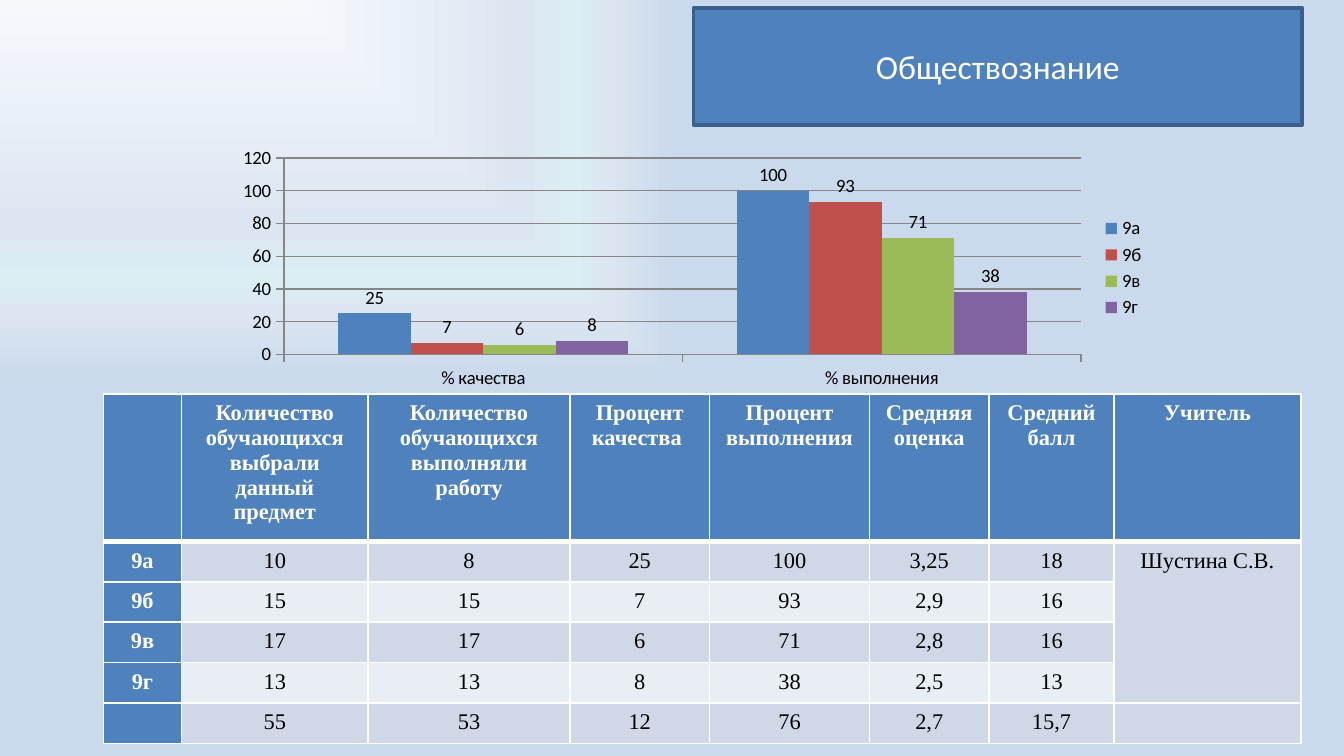
from dataclasses import dataclass

from lxml import etree
from pptx import Presentation
from pptx.chart.data import CategoryChartData
from pptx.dml.color import RGBColor
from pptx.enum.chart import XL_CHART_TYPE as ChartType, XL_LABEL_POSITION as LabelPos
from pptx.enum.chart import XL_LEGEND_POSITION as LegendPos, XL_TICK_MARK as Tick
from pptx.enum.shapes import MSO_SHAPE as Shape
from pptx.enum.text import MSO_ANCHOR as Anchor, PP_ALIGN as Align
from pptx.oxml import parse_xml
from pptx.oxml.ns import nsdecls, qn
from pptx.util import Inches, Pt


@dataclass(frozen=True)
class Theme:
    blue: str = "4F81BD"
    blue_dark: str = "3A5F8C"
    white: str = "FFFFFF"
    black: str = "000000"
    grid: str = "868686"
    bands: tuple = ("D0D8E8", "E9EDF4")
    series: tuple = ("4F81BD", "C0504D", "9BBB59", "8064A2")
    background: tuple = ((0, "F6F9FC"), (60, "DCE6F2"), (74, "DBEEF4"),
                         (83, "DCE6F2"), (100, "CAD9EB"))
    sans: str = "Calibri"
    serif: str = "Times New Roman"
    title_size: int = 18
    table_size: int = 12
    chart_size: int = 10


T = Theme()

CLASSES = ("9а", "9б", "9в", "9г")
HEADER = ("", "Количество обучающихся выбрали данный предмет",
          "Количество обучающихся выполняли работу", "Процент качества ",
          "Процент выполнения", "Средняя оценка", "Средний балл", "Учитель")
RESULTS = (
    ("9а", "10", "8", "25", "100", "3,25", "18", "Шустина С.В."),
    ("9б", "15", "15", "7", "93", "2,9", "16", ""),
    ("9в", "17", "17", "6", "71", "2,8", "16", ""),
    ("9г", "13", "13", "8", "38", "2,5", "13", ""),
    ("", "55", "53", "12", "76", "2,7", "15,7", ""),
)
COL_WIDTHS = (0.58, 1.39, 1.5, 1.04, 1.19, 0.89, 0.93, 1.39)
HEADER_HEIGHT, ROW_HEIGHT = 1.1, 0.3


def rgb(color):
    return RGBColor.from_string(color)


def style_font(font, name, size, color, bold=False):
    font.name, font.size, font.bold = name, Pt(size), bold
    font.color.rgb = rgb(color)


def add_background(s):
    stops = "".join(f'<a:gs pos="{pos * 1000}"><a:srgbClr val="{color}"/></a:gs>'
                    for pos, color in T.background)
    bg = parse_xml(f'<p:bg {nsdecls("p", "a")}><p:bgPr><a:gradFill><a:gsLst>{stops}</a:gsLst>'
                   '<a:path path="rect"/></a:gradFill><a:effectLst/></p:bgPr></p:bg>')
    s.element.cSld.insert(0, bg)


def add_title(s, left, top, width, height):
    sp = s.shapes.add_shape(Shape.RECTANGLE, Inches(left), Inches(top),
                            Inches(width), Inches(height))
    sp.shadow.inherit = False
    sp.fill.solid()
    sp.fill.fore_color.rgb = rgb(T.blue)
    sp.line.color.rgb = rgb(T.blue_dark)
    sp.line.width = Pt(2)
    tf = sp.text_frame
    tf.text = "Обществознание"
    tf.vertical_anchor = Anchor.MIDDLE
    p = tf.paragraphs[0]
    p.alignment = Align.CENTER
    style_font(p.runs[0].font, T.sans, T.title_size, T.white)


def add_results_chart(s, left, top, width, height):
    data = CategoryChartData()
    data.categories = ("% качества", "% выполнения")
    for name, row in zip(CLASSES, RESULTS):
        data.add_series(name, (int(row[3]), int(row[4])))
    chart = s.shapes.add_chart(ChartType.COLUMN_CLUSTERED, Inches(left), Inches(top),
                               Inches(width), Inches(height), data).chart
    style_font(chart.font, T.sans, T.chart_size, T.black)
    chart.has_title = False
    chart.has_legend = True
    chart.legend.position = LegendPos.RIGHT
    chart.legend.include_in_layout = False

    # Axes and gridlines
    value_axis = chart.value_axis
    value_axis.has_major_gridlines = True
    for axis in (chart.category_axis, value_axis):
        axis.major_tick_mark = Tick.OUTSIDE
        axis.minor_tick_mark = Tick.NONE
    for line in (chart.category_axis.format.line, value_axis.format.line,
                 value_axis.major_gridlines.format.line):
        line.color.rgb = rgb(T.grid)
        line.width = Pt(0.75)

    # Columns and their labels
    plot = chart.plots[0]
    plot.gap_width, plot.overlap = 150, 0
    plot.vary_by_categories = False
    for series, color in zip(plot.series, T.series):
        series.format.fill.solid()
        series.format.fill.fore_color.rgb = rgb(color)
        series.data_labels.show_value = True
        series.data_labels.position = LabelPos.OUTSIDE_END


def set_borders(cell, bottom):
    tc_pr = cell._tc.get_or_add_tcPr()
    for i, (side, width) in enumerate((("L", 1), ("R", 1), ("T", 1), ("B", bottom))):
        ln = parse_xml(f'<a:ln{side} {nsdecls("a")} w="{Pt(width)}"><a:solidFill>'
                       f'<a:srgbClr val="{T.white}"/></a:solidFill></a:ln{side}>')
        tc_pr.insert(i, ln)


def fill_cell(cell, text, fill, color, bold, bottom):
    cell.fill.solid()
    cell.fill.fore_color.rgb = rgb(fill)
    set_borders(cell, bottom)
    p = cell.text_frame.paragraphs[0]
    p.text = text
    p.alignment = Align.CENTER
    for r in p.runs:
        style_font(r.font, T.serif, T.table_size, color, bold)
    if not text:  # keeps an empty cell from stretching its row
        etree.SubElement(p._p, qn("a:endParaRPr"), sz=str(T.table_size * 100))


def add_results_table(s, left, top):
    rows = (HEADER,) + RESULTS
    heights = [HEADER_HEIGHT] + [ROW_HEIGHT] * len(RESULTS)
    table = s.shapes.add_table(len(rows), len(HEADER), Inches(left), Inches(top),
                               Inches(sum(COL_WIDTHS)), Inches(sum(heights))).table
    for column, width in zip(table.columns, COL_WIDTHS):
        column.width = Inches(width)
    for row, height in zip(table.rows, heights):
        row.height = Inches(height)

    teacher = len(HEADER) - 1
    for i, row in enumerate(rows):
        for j, text in enumerate(row):
            heading = i == 0 or j == 0
            # The teacher cell spans all classes, so it takes the first band
            band = T.bands[0 if j == teacher else (i - 1) % 2]
            fill_cell(table.cell(i, j), text, T.blue if heading else band,
                      T.white if heading else T.black, heading, 3 if i == 0 else 1)
    table.cell(1, teacher).merge(table.cell(len(CLASSES), teacher))


def main():
    prs = Presentation()
    # Widescreen, 16:9
    prs.slide_width = Inches(10)
    prs.slide_height = prs.slide_width * 9 // 16
    s = prs.slides.add_slide(prs.slide_layouts[6])
    add_background(s)
    add_title(s, 5.16, 0.06, 4.53, 0.87)
    add_results_chart(s, 1.67, 1.06, 6.95, 1.87)
    add_results_table(s, 0.77, 2.93)
    prs.save("out.pptx")


if __name__ == "__main__":
    main()
